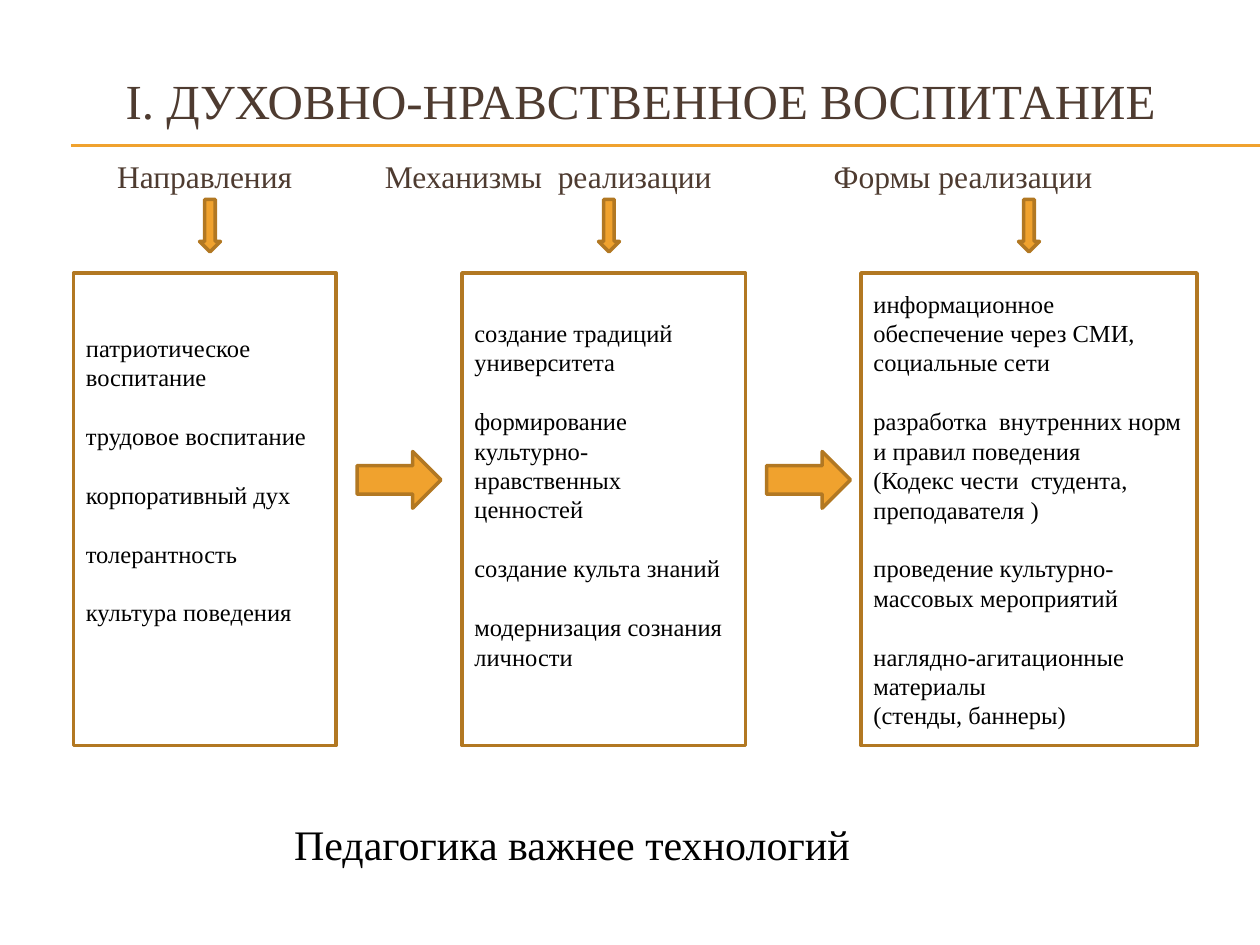
from dataclasses import dataclass

from lxml import etree
from pptx import Presentation
from pptx import util as u
from pptx.dml.color import RGBColor
from pptx.enum import shapes, text
from pptx.oxml.ns import qn


@dataclass(frozen=True)
class Theme:
    font: str = "Times New Roman"
    accent: str = "F0A22E"
    edge: str = "B27822"
    heading: str = "4E3B30"
    ink: str = "000000"
    title_pt: int = 28
    slogan_pt: int = 24
    head_pt: int = 18
    item_pt: int = 14
    leading: float = 16.8  # line pitch of the items


T = Theme()
CELL = 1 / 12  # grid cell in inches: 120 columns by 90 rows
SHAPE = shapes.MSO_SHAPE
MIDDLE = text.MSO_ANCHOR.MIDDLE
LEFT, CENTER = text.PP_ALIGN.LEFT, text.PP_ALIGN.CENTER

# Each column: box left and width, heading left, arrow left, blank rows kept
# below the text, heading, and groups of item lines
COLUMNS = [
    (7, 25, 11.15, 19, 2, "Направления", [
        ["патриотическое", "воспитание"],
        ["трудовое воспитание"],
        ["корпоративный дух"],
        ["толерантность"],
        ["культура поведения"]]),
    (44, 27, 36.65, 57, 1, "Механизмы  реализации", [
        ["создание традиций университета"],
        ["формирование культурно-нравственных ценностей"],
        ["создание культа знаний"],
        ["модернизация сознания личности"]]),
    (82, 32, 79.4, 97, 0, "Формы реализации", [
        ["информационное обеспечение через СМИ, социальные сети"],
        ["разработка  внутренних норм и правил поведения",
         "(Кодекс чести  студента, преподавателя )"],
        ["проведение культурно-массовых мероприятий"],
        ["наглядно-агитационные материалы", "(стенды, баннеры)"]]),
]


def grid(*cells):
    return [u.Inches(c * CELL) for c in cells]


def apply(obj, **values):
    for name, value in values.items():
        setattr(obj, name, value)


def write(p, words, size, color, align=LEFT):
    p.alignment = align
    r = p.add_run()
    r.text = words
    apply(r.font, name=T.font, size=u.Pt(size))
    r.font.color.rgb = RGBColor.from_string(color)


def label(s, box, words, size, color, align=LEFT, anchor=text.MSO_ANCHOR.TOP):
    tf = s.shapes.add_textbox(*grid(*box)).text_frame
    apply(tf, word_wrap=True, vertical_anchor=anchor, margin_left=0,
          margin_right=0, margin_top=0, margin_bottom=0)
    write(tf.paragraphs[0], words, size, color, align)


def outlined(s, kind, box, fill=None):
    sp = s.shapes.add_shape(kind, *grid(*box))
    sp.shadow.inherit = False
    if fill:
        sp.fill.solid()
        sp.fill.fore_color.rgb = RGBColor.from_string(fill)
    else:
        sp.fill.background()
    sp.line.color.rgb = RGBColor.from_string(T.edge)
    sp.line.width = u.Pt(2)
    return sp


def header(s, box):
    """Title with the double rule below it."""
    x, y, w, h = box
    label(s, box, "І. ДУХОВНО-НРАВСТВЕННОЕ ВОСПИТАНИЕ",
          T.title_pt, T.heading, CENTER, MIDDLE)
    for row in (13.8, 13.9):
        ln = s.shapes.add_connector(shapes.MSO_CONNECTOR.STRAIGHT,
                                    *grid(6.75, row, 120, row))
        ln.line.color.rgb = RGBColor.from_string(T.accent)
        ln.line.width = u.Pt(0.75)
        etree.SubElement(ln._element.spPr, qn("a:effectLst"))


def item_box(s, box, groups, blank_rows):
    """Framed list; a group starts one line below the one before."""
    tf = outlined(s, SHAPE.RECTANGLE, box).text_frame
    apply(tf, word_wrap=True, vertical_anchor=MIDDLE,
          margin_bottom=u.Inches(0.05) + u.Pt(blank_rows * T.leading))
    lines = [(words, i > 0 and j == 0)
             for i, group in enumerate(groups) for j, words in enumerate(group)]
    for n, (words, gap) in enumerate(lines):
        p = tf.add_paragraph() if n else tf.paragraphs[0]
        apply(p, line_spacing=u.Pt(T.leading),
              space_before=u.Pt(T.leading if gap else 0))
        write(p, words, T.item_pt, T.ink)


def columns(s, top, height):
    """Headings, down arrows and framed lists."""
    for x, w, head_x, arrow_x, blank_rows, head, groups in COLUMNS:
        label(s, (head_x, top - 11, 34, 3.6), head, T.head_pt, T.heading)
        outlined(s, SHAPE.DOWN_ARROW, (arrow_x, top - 7, 2, 5), T.accent)
        item_box(s, (x, top, w, height), groups, blank_rows)
    # Arrows from one list to the next
    for x in (34, 73):
        outlined(s, SHAPE.RIGHT_ARROW, (x, top + 17, 8, 5.4), T.accent)


def slogan(s, box):
    label(s, box, "Педагогика важнее технологий", T.slogan_pt, T.ink)


def main():
    prs = Presentation()
    apply(prs, slide_width=u.Inches(10), slide_height=u.Inches(7.5))
    s = prs.slides.add_slide(prs.slide_layouts[6])
    header(s, (4, 6, 114, 7))
    columns(s, 26, 45)
    slogan(s, (28, 78, 76, 5))
    prs.save("out.pptx")


if __name__ == "__main__":
    main()
